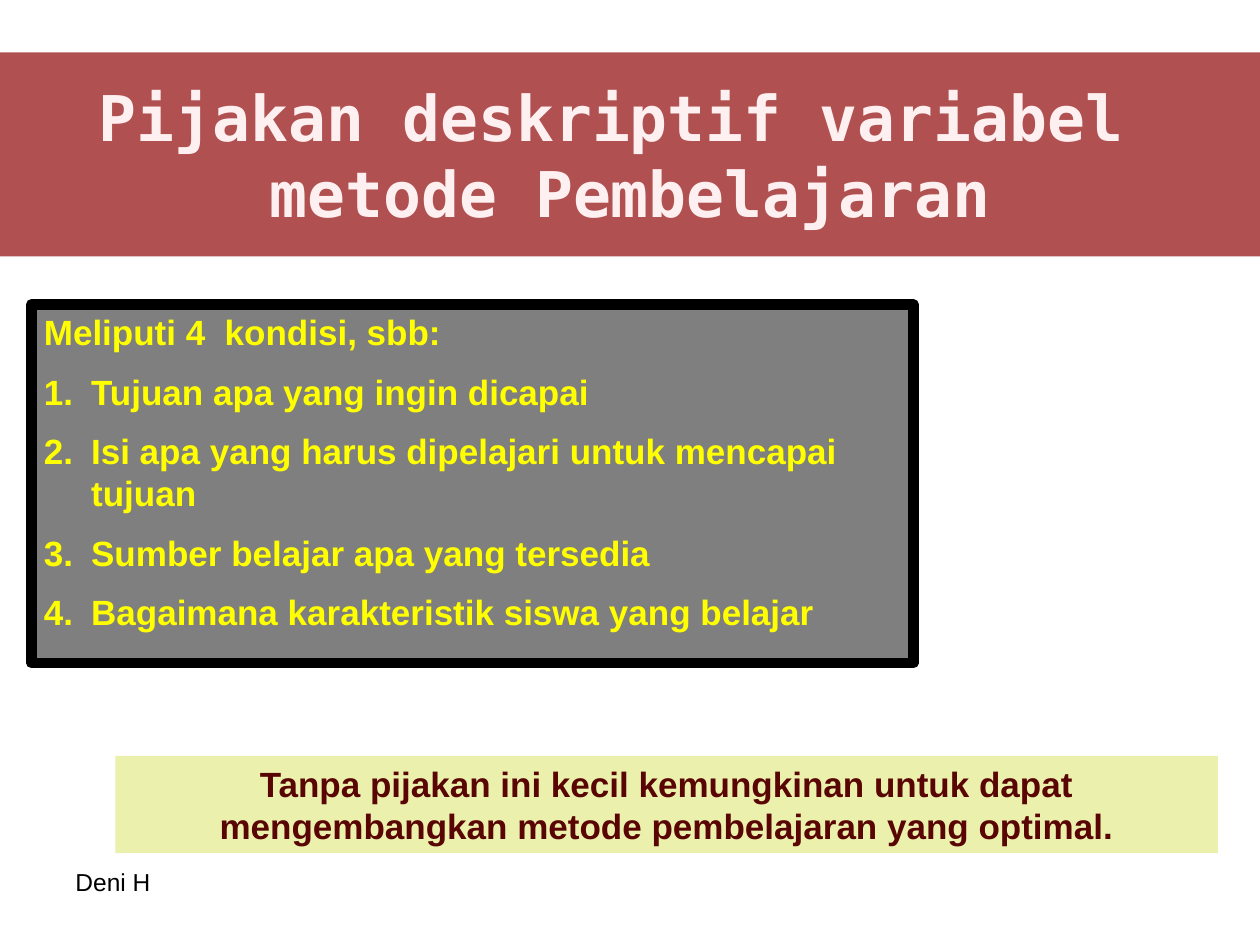
"""Build the slide on descriptive foundations of learning method variables."""
from pptx import Presentation
from pptx.dml.color import RGBColor
from pptx.enum.shapes import MSO_SHAPE
from pptx.enum.text import MSO_ANCHOR as ANCHOR, PP_ALIGN as ALIGN
from pptx.oxml.xmlchemy import OxmlElement
from pptx.util import Pt

COLORS = {
    "band": "8F0707", "title": "FEF0F0", "box": "000000", "list": "FFFF00",
    "note": "EBF1AD", "note_text": "590503", "footer": "000000",
}
TITLE = ["Pijakan deskriptif variabel \nmetode Pembelajaran"]
INTRO = "Meliputi 4  kondisi, sbb:"
CONDITIONS = [
    "Tujuan apa yang ingin dicapai",
    "Isi apa yang harus dipelajari untuk mencapai tujuan",
    "Sumber belajar apa yang tersedia",
    "Bagaimana karakteristik siswa yang belajar",
]
NOTE = ["Tanpa pijakan ini kecil kemungkinan untuk dapat "
        "mengembangkan metode pembelajaran yang optimal."]
FOOTER = ["Deni H"]


def rgb(name):
    return RGBColor.from_string(COLORS[name])


def add_panel(slide, box, fill, opacity=100, line_width=0):
    sp = slide.shapes.add_shape(MSO_SHAPE.RECTANGLE, *map(Pt, box))
    sp.shadow.inherit = False
    sp.fill.solid()
    sp.fill.fore_color.rgb = rgb(fill)
    if opacity < 100:
        alpha = OxmlElement("a:alpha")
        alpha.set("val", str(opacity * 1000))
        sp.fill._xPr.solidFill[0].append(alpha)
    if line_width:
        sp.line.color.rgb = rgb(fill)
        sp.line.width = Pt(line_width)
    else:
        sp.line.fill.background()
    return sp


def add_text(sp, lines, color, size=20, font="Arial", bold=True,
             align=ALIGN.LEFT, anchor=ANCHOR.TOP, before=0, indent=0, numbered_from=None):
    tf = sp.text_frame
    tf.word_wrap = True
    tf.vertical_anchor = anchor
    for i, line in enumerate(lines):
        p = tf.add_paragraph() if i else tf.paragraphs[0]
        p.text = line
        p.alignment = align
        p.space_before = Pt(before)
        for r in p.runs:
            r.font.name, r.font.size, r.font.bold = font, Pt(size), bold
            r.font.color.rgb = rgb(color)
        if indent:
            pPr = p._p.get_or_add_pPr()
            pPr.set("marL", str(Pt(indent)))
            pPr.set("indent", str(-Pt(indent)))
            if numbered_from is not None and i >= numbered_from:
                number = OxmlElement("a:buAutoNum")
                number.set("type", "arabicPeriod")
                pPr.append(number)


def main():
    prs = Presentation()
    prs.slide_width, prs.slide_height = Pt(720), Pt(540)
    s = prs.slides.add_slide(prs.slide_layouts[6])

    footer = s.shapes.add_textbox(Pt(36), Pt(492), Pt(168), Pt(37.5))
    add_text(footer, FOOTER, "footer", size=14, bold=False)

    band = add_panel(s, (0, 30, 720, 116.5), "band", opacity=70)
    add_text(band, TITLE, "title", size=36, font="DejaVu Sans Mono",
             align=ALIGN.CENTER, anchor=ANCHOR.MIDDLE)

    box = add_panel(s, (18, 174, 504, 205), "box", opacity=50, line_width=6)
    add_text(box, [INTRO, *CONDITIONS], "list", before=10, indent=27, numbered_from=1)

    note = add_panel(s, (66, 432, 630, 55.5), "note")
    add_text(note, NOTE, "note_text", align=ALIGN.CENTER, before=10)

    prs.save("out.pptx")


if __name__ == "__main__":
    main()
